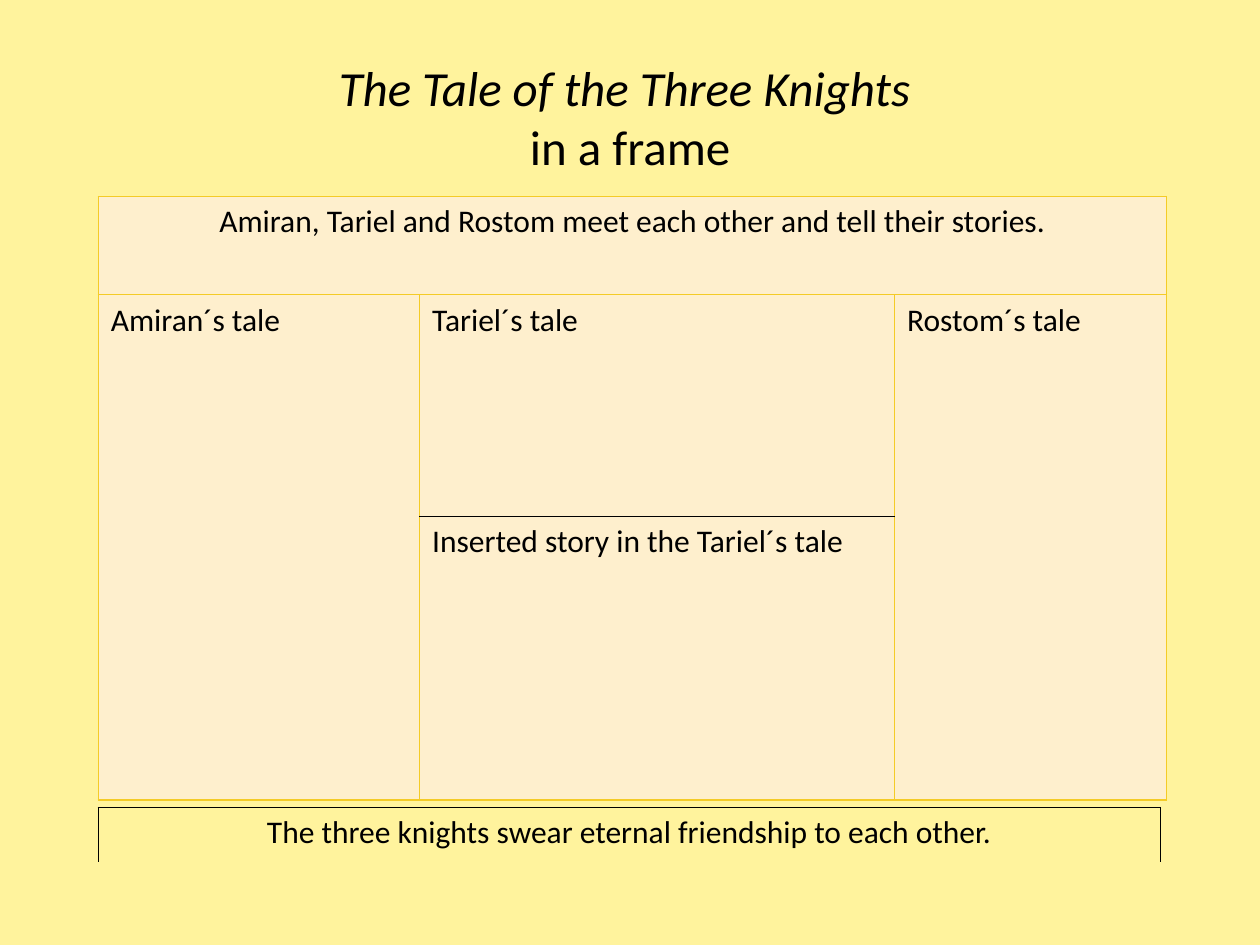
from lxml import etree
from pptx import Presentation
from pptx.dml.color import RGBColor
from pptx.enum.text import MSO_ANCHOR, PP_ALIGN
from pptx.oxml.ns import qn
from pptx.util import Inches, Pt

CENTER = PP_ALIGN.CENTER
LEFT = PP_ALIGN.LEFT
MIDDLE = MSO_ANCHOR.MIDDLE
FONT = "Calibri"
BLACK = "000000"
GOLD = "F4CB27"
CREAM = "FEEFCD"
YELLOW = "FFF39D"
THIN = (GOLD, 0.75)
DARK = (BLACK, 1)


def paint(target, color):
    target.solid()
    target.fore_color.rgb = RGBColor.from_string(color)


def style(para, size, align):
    para.alignment = align
    for run in para.runs:
        run.font.name = FONT
        run.font.size = Pt(size)
        run.font.bold = False
        paint(run.font.fill, BLACK)


def edge(cell, lines):
    props = cell._tc.get_or_add_tcPr()
    for side in "LRTB":
        line = etree.SubElement(props, qn("a:ln" + side))
        if side not in lines:
            etree.SubElement(line, qn("a:noFill"))
            continue
        color, width = lines[side]
        line.set("w", str(Pt(width)))
        fill = etree.SubElement(line, qn("a:solidFill"))
        etree.SubElement(fill, qn("a:srgbClr"), val=color)


def write(cell, text, align=LEFT):
    cell.text = text
    style(cell.text_frame.paragraphs[0], 18, align)


def grid(slide, box, cols, rows):
    table = slide.shapes.add_table(
        len(rows), len(cols), *map(Inches, box)).table
    table.first_row = False
    table.horz_banding = False
    for col, width in zip(table.columns, cols):
        col.width = Inches(width)
    for row, height in zip(table.rows, rows):
        row.height = Inches(height)
    return table


def add_title(slide, box):
    title = slide.shapes.title
    title.left, title.top, title.width, title.height = map(Inches, box)
    frame = title.text_frame
    frame.vertical_anchor = MIDDLE
    para = frame.paragraphs[0]
    para.text = "The Tale of the Three Knights \vin a frame"
    style(para, 28, CENTER)
    para.runs[0].font.italic = True


def add_tales(slide, box):
    table = grid(slide, box, [2.55, 3.77, 2.16], [0.78, 1.76, 2.25])
    for cell in table.iter_cells():
        edge_set = dict.fromkeys("LRTB", THIN)
        if cell._tc is table.cell(1, 1)._tc:
            edge_set["B"] = DARK
        if cell._tc is table.cell(2, 1)._tc:
            edge_set["T"] = DARK
        edge(cell, edge_set)
        paint(cell.fill, CREAM)
    table.cell(0, 0).merge(table.cell(0, 2))
    for col in (0, 2):
        table.cell(1, col).merge(table.cell(2, col))
    write(table.cell(0, 0),
          "Amiran, Tariel and Rostom meet each other and tell their stories.",
          CENTER)
    for col, name in enumerate(["Amiran", "Tariel", "Rostom"]):
        write(table.cell(1, col), f"{name}´s tale")
    write(table.cell(2, 1), "Inserted story in the Tariel´s tale")


def add_close(slide, box):
    cell = grid(slide, box, [box[2]], [box[3]]).cell(0, 0)
    edge(cell, dict.fromkeys("LRT", DARK))
    cell.fill.background()
    write(cell, "The three knights swear eternal friendship to each other.",
          CENTER)


def main():
    deck = Presentation()
    deck.slide_width, deck.slide_height = Inches(10), Inches(7.5)
    slide = deck.slides.add_slide(deck.slide_layouts[5])
    paint(slide.background.fill, YELLOW)
    add_title(slide, (0.5, 0.3, 9, 1.25))
    add_tales(slide, (0.78, 1.56, 8.48, 4.79))
    add_close(slide, (0.78, 6.41, 8.43, 0.43))
    deck.save("out.pptx")


if __name__ == "__main__":
    main()
